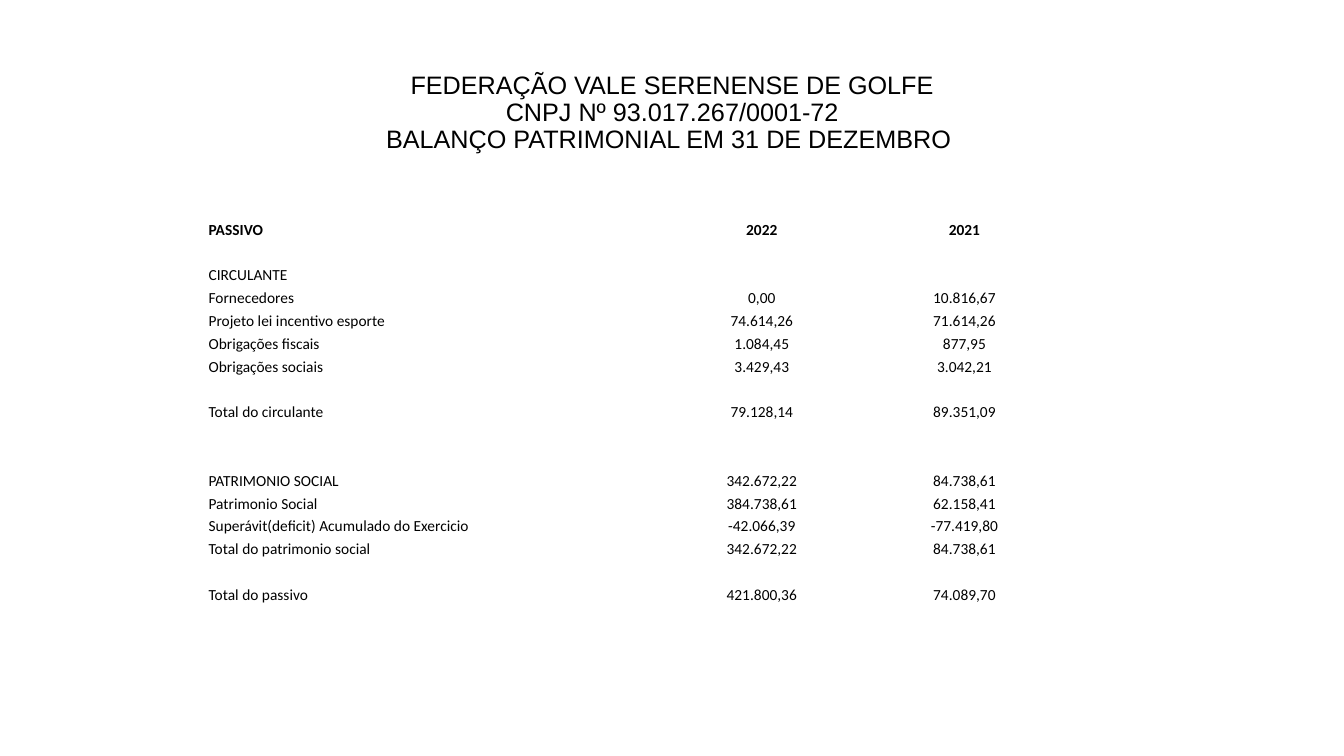
"""Builds the balance sheet slide listing liabilities for 2022 and 2021."""
from dataclasses import dataclass

from lxml.etree import SubElement
from pptx import Presentation
from pptx.dml.color import RGBColor as RGB
from pptx.enum.text import MSO_ANCHOR as Anchor, PP_ALIGN as Align
from pptx.oxml.ns import qn
from pptx.slide import Slide
from pptx.table import Table, _Cell as Cell
from pptx.util import Pt

COLORS = {"text": "000000"}
TITLE = ("FEDERAÇÃO VALE SERENENSE DE GOLFE\v"
         "CNPJ Nº 93.017.267/0001-72\v"
         "BALANÇO PATRIMONIAL EM 31 DE DEZEMBRO ")
COL_WIDTHS = (80.6, 80.6, 159.8, 149.8, 139.7)
ROW_HEIGHT = 16.3


@dataclass(frozen=True)
class Entry:
    label: str = ""
    y2022: str = ""
    y2021: str = ""
    span: int = 2
    bold: bool = False


ENTRIES = (
    Entry("PASSIVO", "2022", "2021", span=1, bold=True),
    Entry(span=1),
    Entry("CIRCULANTE"),
    Entry("Fornecedores", "0,00", "10.816,67"),
    Entry("Projeto lei incentivo esporte", "74.614,26", "71.614,26", span=3),
    Entry("Obrigações fiscais", "1.084,45", "877,95"),
    Entry("Obrigações sociais", "3.429,43", "3.042,21"),
    Entry(span=1),
    Entry("Total do circulante", "79.128,14", "89.351,09"),
    Entry(span=1),
    Entry(span=1),
    Entry("PATRIMONIO SOCIAL", "342.672,22", "84.738,61", span=3),
    Entry("Patrimonio Social", "384.738,61", "62.158,41"),
    Entry("Superávit(deficit) Acumulado do Exercicio", "-42.066,39", "-77.419,80", span=3),
    Entry("Total do patrimonio social", "342.672,22", "84.738,61", span=3),
    Entry(span=1),
    Entry("Total do passivo", "421.800,36", "74.089,70"),
)


def add_title(s: Slide) -> None:
    """Add the centred three-line heading."""
    tf = s.shapes.add_textbox(Pt(66.2), Pt(28.8), Pt(828), Pt(104.4)).text_frame
    tf.word_wrap = True
    tf.vertical_anchor = Anchor.MIDDLE
    p = tf.paragraphs[0]
    p.text = TITLE
    p.alignment = Align.CENTER
    p.line_spacing = 0.9
    p.font.name, p.font.size = "Arial", Pt(18)
    p.font.color.rgb = RGB.from_string(COLORS["text"])


def fill_cell(cell: Cell, text: str, align: Align, bold: bool) -> None:
    """Write one unfilled cell with tight margins."""
    cell.fill.background()
    cell.vertical_anchor = Anchor.BOTTOM
    cell.margin_left = cell.margin_right = cell.margin_top = Pt(0.7)
    cell.margin_bottom = Pt(0)
    p = cell.text_frame.paragraphs[0]
    p.alignment = align
    p.font.name, p.font.size, p.font.bold = "Calibri", Pt(11), bold
    p.font.color.rgb = RGB.from_string(COLORS["text"])
    if text:
        p.text = text
    else:
        SubElement(p._p, qn("a:endParaRPr"), sz="1100")


def fill_row(table: Table, row: int, entry: Entry) -> None:
    """Write one entry across the table and merge its label cells."""
    texts = (entry.label, "", "", entry.y2022, entry.y2021)
    for col, text in enumerate(texts):
        align = Align.LEFT if col < 3 else Align.CENTER
        fill_cell(table.cell(row, col), text, align, entry.bold)
    if entry.span > 1:
        table.cell(row, 0).merge(table.cell(row, entry.span - 1))


def add_balance(s: Slide) -> None:
    """Add the table of liabilities."""
    table = s.shapes.add_table(
        len(ENTRIES), len(COL_WIDTHS), Pt(148.3), Pt(154.8),
        Pt(sum(COL_WIDTHS)), Pt(ROW_HEIGHT * len(ENTRIES))).table
    table.first_row = table.horz_banding = False
    for column, width in zip(table.columns, COL_WIDTHS):
        column.width = Pt(width)
    for row, entry in enumerate(ENTRIES):
        table.rows[row].height = Pt(ROW_HEIGHT)
        fill_row(table, row, entry)


def main() -> None:
    """Build and save the slide."""
    prs = Presentation()
    prs.slide_width, prs.slide_height = Pt(960), Pt(540)
    s = prs.slides.add_slide(prs.slide_layouts[6])
    add_title(s)
    add_balance(s)
    prs.save("out.pptx")


if __name__ == "__main__":
    main()
